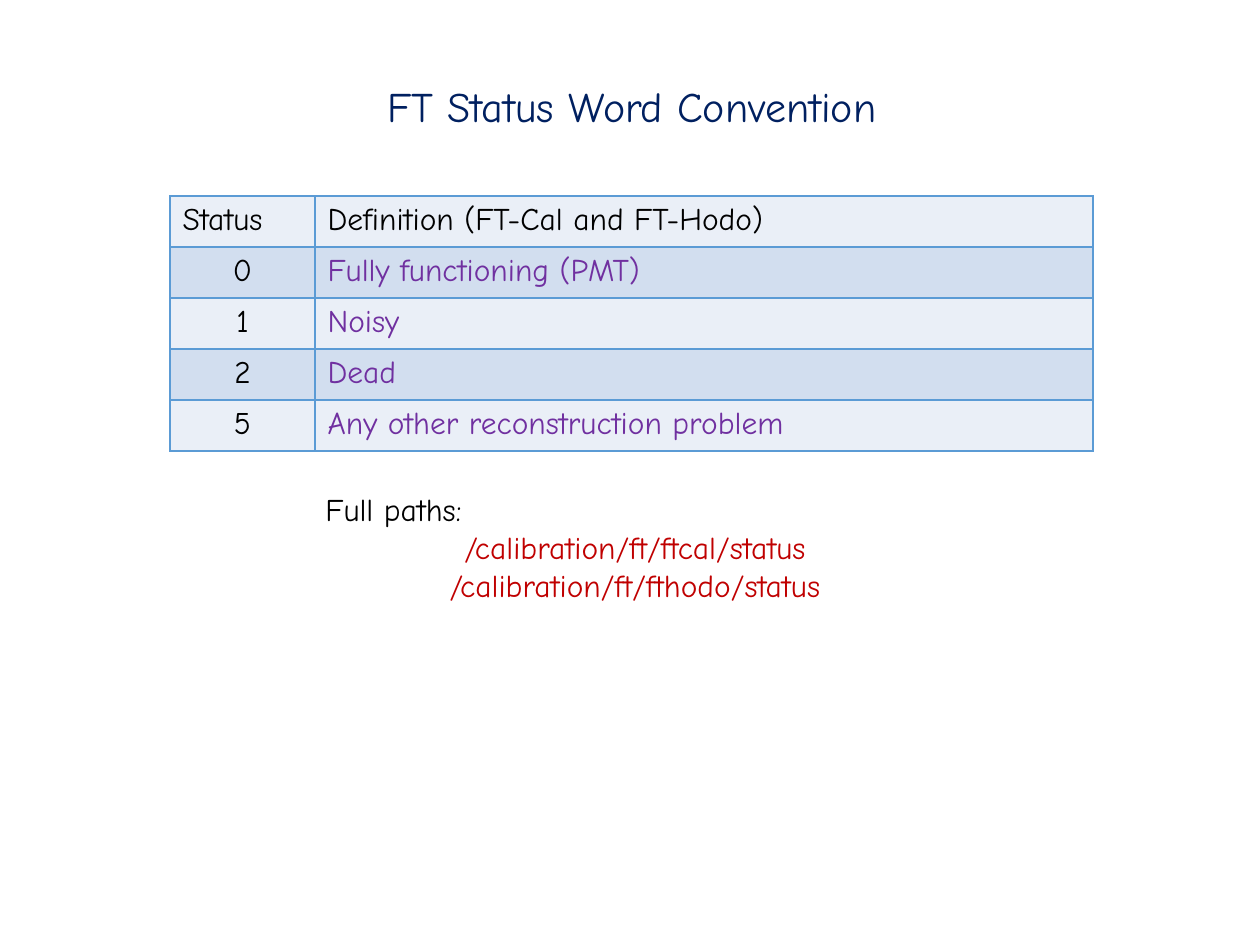
from lxml.etree import SubElement as Sub
from pptx import Presentation
from pptx.dml.color import RGBColor
from pptx.enum.text import MSO_ANCHOR as Anchor, MSO_AUTO_SIZE as Fit, PP_ALIGN as Align
from pptx.oxml.ns import qn
from pptx.util import Emu, Pt

SCALE = 914400 / 126
FONT = "Comic Neue"
BLACK, NAVY, PURPLE, RED = "000000", "002060", "7030A0", "C00000"
EDGE, LIGHT, DARK = "5B9BD5", "EAEFF7", "D2DEEF"
ROWS = [
    ("Status", "Definition (FT-Cal and FT-Hodo)"),
    ("0", "Fully functioning (PMT)"),
    ("1", "Noisy"),
    ("2", "Dead"),
    ("5", "Any other reconstruction problem"),
]
PATHS = ["/calibration/ft/ftcal/status", "/calibration/ft/fthodo/status"]


def px(num):
    return Emu(round(num * SCALE))


def paint(code):
    return RGBColor.from_string(code)


def write(para, text, size, color, align=Align.LEFT):
    para.alignment = align
    run = para.add_run()
    run.text = text
    font = run.font
    font.name, font.size = FONT, Pt(size)
    font.color.rgb = paint(color)


def place(shape, box):
    shape.left, shape.top, shape.width, shape.height = map(px, box)


def edge(cell):
    props = cell._tc.get_or_add_tcPr()
    for side in ("lnL", "lnR", "lnT", "lnB"):
        line = Sub(props, qn(f"a:{side}"), w=str(Pt(1)))
        fill = Sub(line, qn("a:solidFill"))
        Sub(fill, qn("a:srgbClr"), val=EDGE)


def add_title(slide, box):
    title = slide.shapes.title
    place(title, box)
    frame = title.text_frame
    frame.word_wrap = True
    frame.auto_size = Fit.SHAPE_TO_FIT_TEXT
    frame.vertical_anchor = Anchor.TOP
    write(frame.paragraphs[0], "FT Status Word Convention", 24, NAVY, Align.CENTER)


def add_codes(slide, box):
    left, top, wide, high = box
    table = slide.shapes.add_table(len(ROWS), 2, *map(px, box)).table
    first = 145
    for col, width in zip(table.columns, (first, wide - first)):
        col.width = px(width)
    for r, texts in enumerate(ROWS):
        table.rows[r].height = px(high / len(ROWS))
        for c, text in enumerate(texts):
            cell = table.cell(r, c)
            edge(cell)
            cell.fill.solid()
            cell.fill.fore_color.rgb = paint(DARK if r % 2 else LIGHT)
            color = PURPLE if r and c else BLACK
            align = Align.CENTER if r and not c else Align.LEFT
            write(cell.text_frame.paragraphs[0], text, 18, color, align)


def add_paths(slide, box):
    frame = slide.shapes.add_textbox(*map(px, box)).text_frame
    frame.word_wrap = True
    frame.auto_size = Fit.SHAPE_TO_FIT_TEXT
    write(frame.paragraphs[0], "Full paths:", 18, BLACK)
    for text in PATHS:
        write(frame.add_paragraph(), text, 18, RED, Align.CENTER)


def main():
    deck = Presentation()
    deck.slide_width, deck.slide_height = px(1260), px(945)
    slide = deck.slides.add_slide(deck.slide_layouts[5])
    add_title(slide, (198, 74, 868, 63))
    add_codes(slide, (170, 196, 923, 255))
    add_paths(slide, (313, 484, 644, 127))
    deck.save("out.pptx")


if __name__ == "__main__":
    main()
